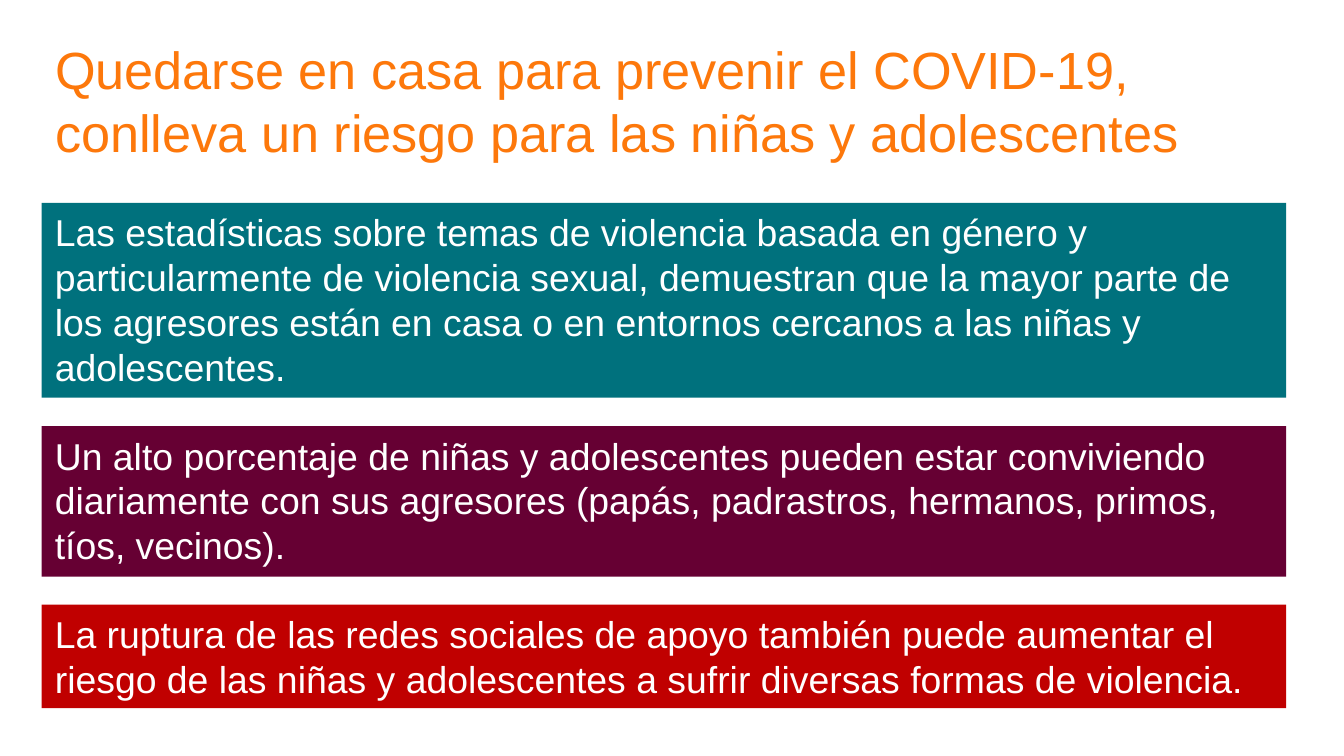
import pptx
import pptx.dml.color
import pptx.enum.shapes
import pptx.enum.text
import pptx.util

Inches = pptx.util.Inches
RGBColor = pptx.dml.color.RGBColor

ORANGE = RGBColor(0xFD, 0x78, 0x0B)
TEAL = RGBColor(0x00, 0x71, 0x7D)
PLUM = RGBColor(0x66, 0x00, 0x33)
RED = RGBColor(0xC0, 0x00, 0x00)
WHITE = RGBColor(0xFF, 0xFF, 0xFF)

LEFT = Inches(0.31)
BAND_WIDTH = Inches(9.26)
BAND_TOP = Inches(1.51)
GAP = Inches(0.21)

BANDS = [
    (TEAL, 1.45, "Las estadísticas sobre temas de violencia basada en género y "
     "particularmente de violencia sexual, demuestran que la mayor parte de los "
     "agresores están en casa o en entornos cercanos a las niñas y adolescentes."),
    (PLUM, 1.12, "Un alto porcentaje de niñas y adolescentes pueden estar "
     "conviviendo diariamente con sus agresores (papás, padrastros, hermanos, "
     "primos, tíos, vecinos)."),
    (RED, 0.77, "La ruptura de las redes sociales de apoyo también puede aumentar "
     "el riesgo de las niñas y adolescentes a sufrir diversas formas de violencia."),
]


def write_text(shape, text, size, color, vertical_inset):
    frame = shape.text_frame
    frame.text = text
    frame.word_wrap = True
    frame.auto_size = pptx.enum.text.MSO_AUTO_SIZE.NONE
    frame.vertical_anchor = pptx.enum.text.MSO_ANCHOR.TOP
    frame.margin_left = frame.margin_right = Inches(0.1)
    frame.margin_top = frame.margin_bottom = Inches(vertical_inset)
    paragraph = frame.paragraphs[0]
    paragraph.alignment = pptx.enum.text.PP_ALIGN.LEFT
    paragraph.line_spacing = 1.0
    paragraph.space_before = pptx.util.Pt(0)
    paragraph.font.name = "Arial"
    paragraph.font.size = pptx.util.Pt(size)
    paragraph.font.color.rgb = color


presentation = pptx.Presentation()
presentation.slide_width = Inches(10)
presentation.slide_height = presentation.slide_width * 9 // 16
slide = presentation.slides.add_slide(presentation.slide_layouts[5])

title = slide.shapes.title
title.left, title.top = LEFT, Inches(0.18)
title.width, title.height = Inches(9.41), Inches(1.59)
write_text(title, "Quedarse en casa para prevenir el COVID-19, conlleva un riesgo "
           "para las niñas y adolescentes", 28, ORANGE, 0.1)

top = BAND_TOP
for color, height, text in BANDS:
    band = slide.shapes.add_shape(
        pptx.enum.shapes.MSO_SHAPE.RECTANGLE, LEFT, top, BAND_WIDTH, Inches(height))
    band.shadow.inherit = False
    band.fill.solid()
    band.fill.fore_color.rgb = color
    band.line.fill.background()
    write_text(band, text, 20, WHITE, 0.05)
    top += band.height + GAP

presentation.save("out.pptx")
